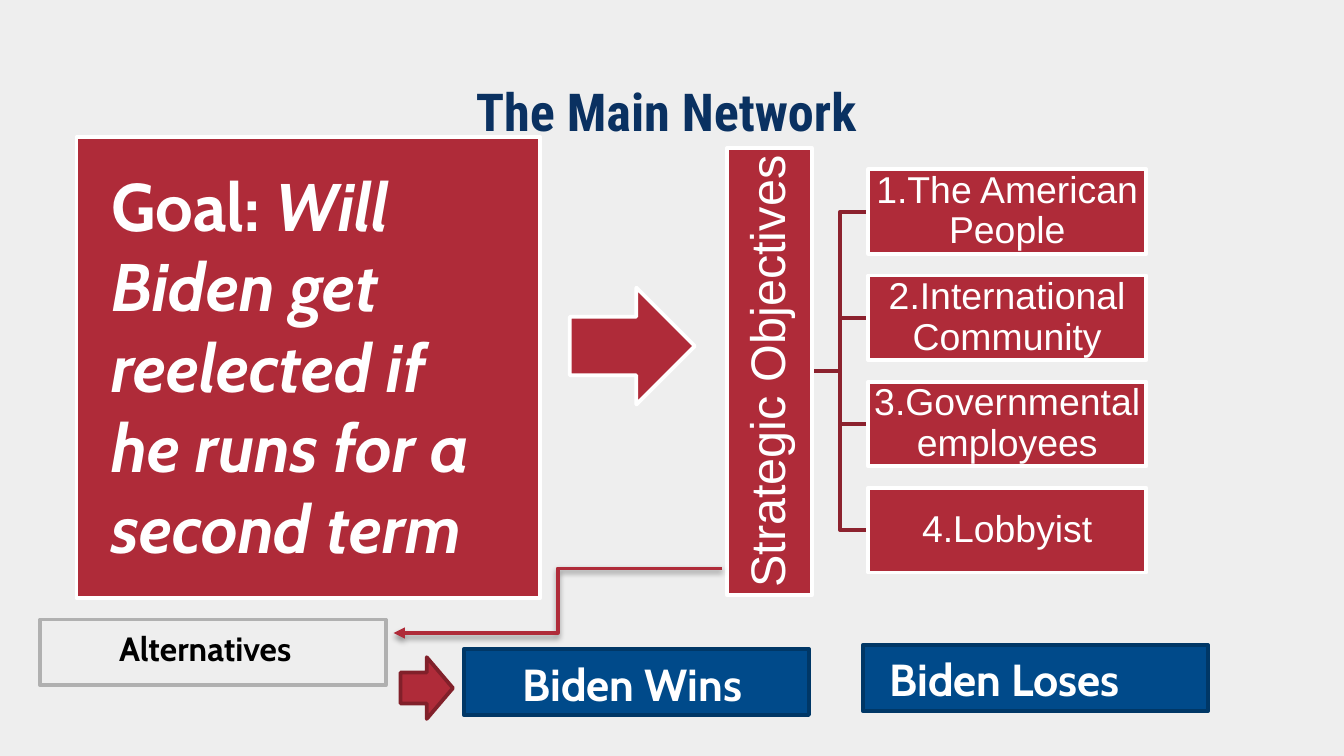
from dataclasses import dataclass

from lxml import etree
from pptx import Presentation
from pptx.dml.color import RGBColor
from pptx.enum.shapes import MSO_CONNECTOR as Connector
from pptx.enum.shapes import MSO_SHAPE as Shape
from pptx.enum.text import MSO_ANCHOR as Anchor
from pptx.enum.text import PP_ALIGN as Align
from pptx.oxml import parse_xml
from pptx.oxml.ns import nsdecls, qn
from pptx.util import Inches, Pt

BACKGROUND = RGBColor(0xEE, 0xEE, 0xEE)
NAVY = RGBColor(0x0A, 0x31, 0x61)
RED = RGBColor(0xAF, 0x2B, 0x39)
DARK_RED = RGBColor(0x8C, 0x22, 0x2E)
ARROW_EDGE = RGBColor(0x81, 0x20, 0x2A)
BLUE = RGBColor(0x00, 0x4A, 0x8A)
DARK_BLUE = RGBColor(0x00, 0x37, 0x66)
GRAY = RGBColor(0xB0, 0xB0, 0xB0)
WHITE = RGBColor(0xFF, 0xFF, 0xFF)
BLACK = RGBColor(0x00, 0x00, 0x00)

SLIDE_WIDTH = Inches(10)
SLIDE_HEIGHT = SLIDE_WIDTH * 9 // 16

OBJECTIVES = (
    "1.The American People",
    "2.International Community",
    "3.Governmental employees",
    "4.Lobbyist",
)
OBJECTIVE_LEFT, OBJECTIVE_TOP, OBJECTIVE_STEP = 6.46, 1.26, 0.79
OBJECTIVE_WIDTH, BAR_HEIGHT = 2.07, 0.63
TRUNK_LEFT, TRUNK_BEND, TRUNK_Y = 6.04, 6.25, 2.76
OUTCOME_WIDTH, OUTCOME_HEIGHT = 2.57, 0.49


@dataclass(frozen=True)
class Box:
    left: float
    top: float
    width: float
    height: float

    def lengths(self) -> tuple:
        return tuple(map(Inches, (self.left, self.top, self.width, self.height)))


@dataclass(frozen=True)
class Panel:
    box: Box
    fill: RGBColor = RED
    edge: RGBColor = WHITE
    kind: Shape = Shape.RECTANGLE


@dataclass(frozen=True)
class Label:
    box: Box
    text: str
    size: int
    color: RGBColor = WHITE
    align: Align = Align.LEFT
    italic_text: str = ""


def add_panel(slide, panel: Panel):
    shape = slide.shapes.add_shape(panel.kind, *panel.box.lengths())
    shape.shadow.inherit = False
    shape.fill.solid()
    shape.fill.fore_color.rgb = panel.fill
    shape.line.color.rgb = panel.edge
    shape.line.width = Pt(2)
    return shape


def add_bar(slide, box: Box, text: str, size: int, inset: float, rotation: int = 0) -> None:
    bar = add_panel(slide, Panel(box))
    bar.rotation = rotation
    frame = bar.text_frame
    frame.word_wrap = True
    frame.vertical_anchor = Anchor.MIDDLE
    frame.margin_left = frame.margin_right = Inches(inset)
    frame.margin_top = frame.margin_bottom = Inches(inset)
    paragraph = frame.paragraphs[0]
    paragraph.text = text
    paragraph.alignment = Align.CENTER
    paragraph.line_spacing = 0.9
    paragraph.font.name = "Arial"
    paragraph.font.size = Pt(size)
    paragraph.font.color.rgb = WHITE


def add_label(slide, label: Label) -> None:
    frame = slide.shapes.add_textbox(*label.box.lengths()).text_frame
    frame.word_wrap = True
    paragraph = frame.paragraphs[0]
    paragraph.alignment = label.align
    paragraph.font.name = "Cabin"
    paragraph.font.size = Pt(label.size)
    paragraph.font.bold = True
    paragraph.font.color.rgb = label.color
    paragraph.add_run().text = label.text
    if label.italic_text:
        emphasis = paragraph.add_run()
        emphasis.text = label.italic_text
        emphasis.font.italic = True


def add_branch(slide, end_y: float) -> None:
    corners = [(TRUNK_BEND, TRUNK_Y), (TRUNK_BEND, end_y), (OBJECTIVE_LEFT, end_y)]
    builder = slide.shapes.build_freeform(Inches(TRUNK_LEFT), Inches(TRUNK_Y))
    builder.add_line_segments([(Inches(x), Inches(y)) for x, y in corners], close=False)
    branch = builder.convert_to_shape()
    branch.shadow.inherit = False
    branch.fill.background()
    branch.line.color.rgb = DARK_RED
    branch.line.width = Pt(2)


def add_alternatives_arrow(slide) -> None:
    arrow = slide.shapes.add_connector(
        Connector.ELBOW, Inches(5.37), Inches(4.23), Inches(2.93), Inches(4.71)
    )
    arrow.line.color.rgb = RED
    arrow.line.width = Pt(2)
    properties = arrow.element.spPr
    etree.SubElement(properties.find(qn("a:ln")), qn("a:tailEnd"), type="triangle")
    properties.append(parse_xml(
        f'<a:effectLst {nsdecls("a")}>'
        f'<a:outerShdw blurRad="{Pt(3.1)}" dist="{Pt(1.6)}" dir="5400000" rotWithShape="0">'
        '<a:srgbClr val="000000"><a:alpha val="38000"/></a:srgbClr>'
        '</a:outerShdw></a:effectLst>'
    ))


def add_title(slide) -> None:
    title = slide.shapes.title
    title.left, title.top, title.width, title.height = Box(0.79, 0.49, 8.42, 0.63).lengths()
    frame = title.text_frame
    frame.vertical_anchor = Anchor.TOP
    frame.margin_left = frame.margin_right = Inches(0.1)
    frame.margin_top = frame.margin_bottom = Inches(0.1)
    paragraph = frame.paragraphs[0]
    paragraph.text = "The Main Network "
    paragraph.alignment = Align.CENTER
    paragraph.font.name = "Roboto Condensed"
    paragraph.font.size = Pt(28)
    paragraph.font.bold = True
    paragraph.font.color.rgb = NAVY


def add_objectives(slide) -> None:
    tops = [OBJECTIVE_TOP + OBJECTIVE_STEP * row for row in range(len(OBJECTIVES))]
    for top in reversed(tops):
        add_branch(slide, top + BAR_HEIGHT / 2)
    add_bar(slide, Box(4.06, 2.45, 3.33, BAR_HEIGHT), "Strategic Objectives", 26, 0.02, 270)
    for top, objective in zip(tops, OBJECTIVES):
        box = Box(OBJECTIVE_LEFT, top, OBJECTIVE_WIDTH, BAR_HEIGHT)
        add_bar(slide, box, objective, 20, 0.01)


def main() -> None:
    presentation = Presentation()
    presentation.slide_width = SLIDE_WIDTH
    presentation.slide_height = SLIDE_HEIGHT
    slide = presentation.slides.add_slide(presentation.slide_layouts[5])
    slide.background.fill.solid()
    slide.background.fill.fore_color.rgb = BACKGROUND

    add_title(slide)
    add_objectives(slide)

    panels = (
        Panel(Box(0.57, 1.02, 3.45, 3.43)),
        Panel(Box(4.24, 2.14, 0.93, 0.87), kind=Shape.RIGHT_ARROW),
        Panel(Box(0.3, 4.61, OUTCOME_WIDTH, OUTCOME_HEIGHT), BACKGROUND, GRAY),
        Panel(Box(3.45, 4.83, OUTCOME_WIDTH, OUTCOME_HEIGHT), BLUE, DARK_BLUE),
        Panel(Box(6.42, 4.8, OUTCOME_WIDTH, OUTCOME_HEIGHT), BLUE, DARK_BLUE),
        Panel(Box(2.98, 4.89, 0.39, 0.46), RED, ARROW_EDGE, Shape.RIGHT_ARROW),
    )
    for panel in panels:
        add_panel(slide, panel)

    labels = (
        Label(Box(0.73, 1.17, 3.15, 3.13), "Goal: ", 36,
              italic_text="Will Biden get reelected if he runs for a second term"),
        Label(Box(0.27, 4.62, 2.57, 0.4), "Alternatives ", 18, BLACK, Align.CENTER),
        Label(Box(3.42, 4.84, 2.57, 0.5), "Biden Wins", 24, align=Align.CENTER),
        Label(Box(6.52, 4.8, 2.38, 0.5), "Biden Loses", 24),
    )
    for label in labels:
        add_label(slide, label)

    add_alternatives_arrow(slide)
    presentation.save("out.pptx")


if __name__ == "__main__":
    main()
